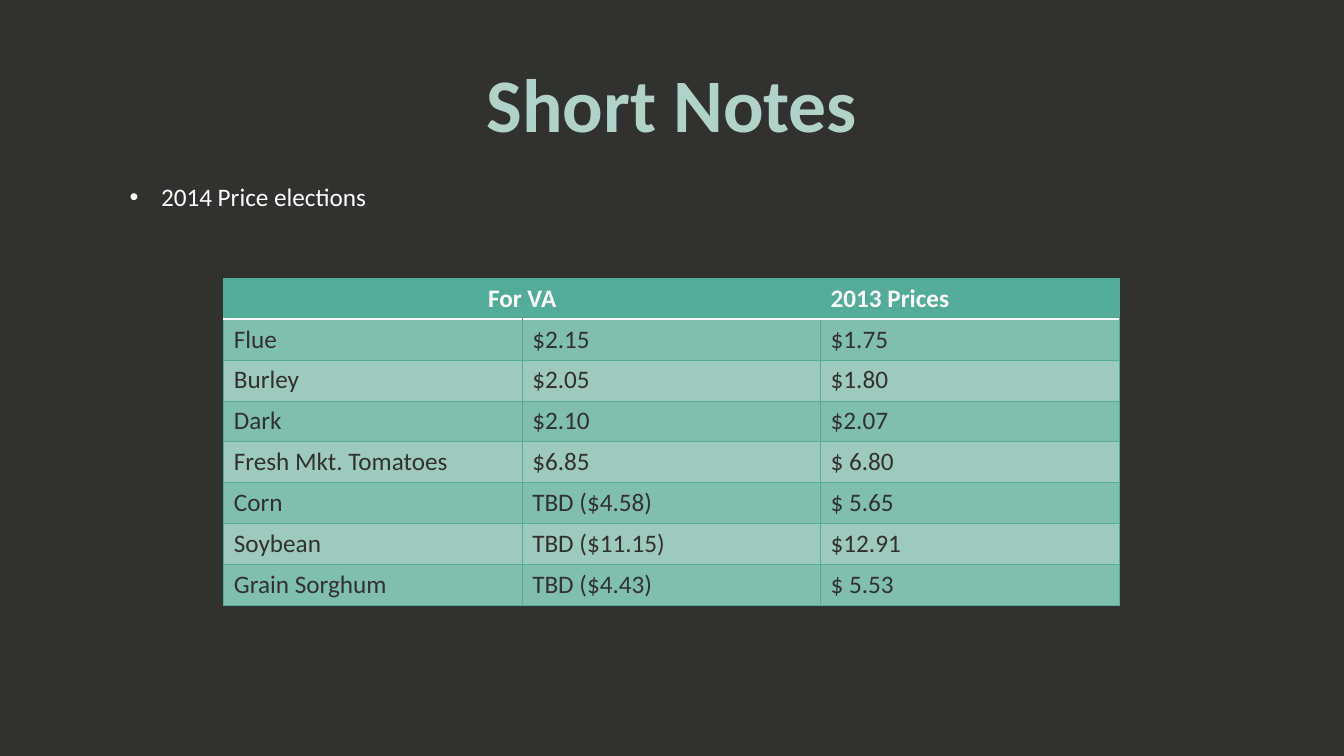
"""Build the Short Notes slide with the 2014 price election table."""
from pptx import Presentation
from pptx.dml.color import RGBColor
from pptx.enum.text import PP_ALIGN as Align
from pptx.oxml.ns import qn
from pptx.util import Cm, Pt
from lxml.etree import SubElement

TITLE = "Short Notes"
BULLET = "2014 Price elections"
ROWS = [
    ("For VA", "", "2013 Prices"),
    ("Flue", "$2.15", "$1.75"),
    ("Burley", "$2.05", "$1.80"),
    ("Dark", "$2.10", "$2.07"),
    ("Fresh Mkt. Tomatoes", "$6.85", "$ 6.80"),
    ("Corn", "TBD ($4.58)", "$ 5.65"),
    ("Soybean", "TBD ($11.15)", "$12.91"),
    ("Grain Sorghum", "TBD ($4.43)", "$ 5.53"),
]

FONT = "Calibri"
DARK = RGBColor(0x31, 0x31, 0x2F)
WHITE = RGBColor(0xFF, 0xFF, 0xFF)
MINT = RGBColor(0xB0, 0xD2, 0xC8)
GREEN = RGBColor(0x52, 0xAC, 0x97)
BAND = RGBColor(0x80, 0xBF, 0xAE)
PALE = RGBColor(0x9E, 0xCA, 0xBE)

COL_W, ROW_H = Cm(7.52), Cm(1.03)


def style(p, size, color, bold=False, align=Align.LEFT):
    p.alignment = align
    p.font.name, p.font.size, p.font.bold = FONT, Pt(size), bold
    p.font.color.rgb = color


def add_text(slide, text, x, y, w, h, wrap):
    tf = slide.shapes.add_textbox(x, y, w, h).text_frame
    tf.word_wrap = wrap
    p = tf.paragraphs[0]
    p.text = text
    return p


def set_border(cell, index, side, color, width):
    tc_pr = cell._tc.get_or_add_tcPr()
    ln = SubElement(tc_pr, qn(f"a:ln{side}"), w=str(Pt(width)))
    fill = SubElement(ln, qn("a:solidFill"))
    SubElement(fill, qn("a:srgbClr"), val=str(color))
    tc_pr.insert(index, ln)


def add_price_table(slide):
    n_rows, n_cols = len(ROWS), len(ROWS[0])
    table = slide.shapes.add_table(
        n_rows, n_cols, Cm(5.64), Cm(7.01), COL_W * n_cols, ROW_H * n_rows).table
    for col in table.columns:
        col.width = COL_W
    for i, values in enumerate(ROWS):
        table.rows[i].height = ROW_H
        header = i == 0
        for j, value in enumerate(values):
            cell = table.cell(i, j)
            cell.text = value
            align = Align.CENTER if header and j == 0 else Align.LEFT
            style(cell.text_frame.paragraphs[0], 18, WHITE if header else DARK,
                  header, align)
            cell.fill.solid()
            cell.fill.fore_color.rgb = GREEN if header else BAND if i % 2 else PALE
            for k, side in enumerate("LRTB"):
                rule = (i, side) in ((0, "B"), (1, "T"))
                set_border(cell, k, side, WHITE if rule else GREEN, 1 if rule else 0.5)
    table.cell(0, 0).merge(table.cell(0, 1))


def main():
    prs = Presentation()
    prs.slide_width, prs.slide_height = Cm(33.87), Cm(19.05)
    s = prs.slides.add_slide(prs.slide_layouts[6])
    s.background.fill.solid()
    s.background.fill.fore_color.rgb = DARK

    p = add_text(s, TITLE, 0, Cm(1.3), prs.slide_width, Cm(2.57), True)
    style(p, 54, MINT, True, Align.CENTER)

    p = add_text(s, BULLET, Cm(3.02), Cm(4.45), Cm(6.96), Cm(1.8), False)
    p_pr = p._p.get_or_add_pPr()
    p_pr.set("marL", str(Cm(0.79)))
    p_pr.set("indent", str(-Cm(0.79)))
    SubElement(p_pr, qn("a:buFont"), typeface="Arial")
    SubElement(p_pr, qn("a:buChar"), char="•")
    style(p, 18, WHITE)

    add_price_table(s)
    prs.save("out.pptx")


if __name__ == "__main__":
    main()
